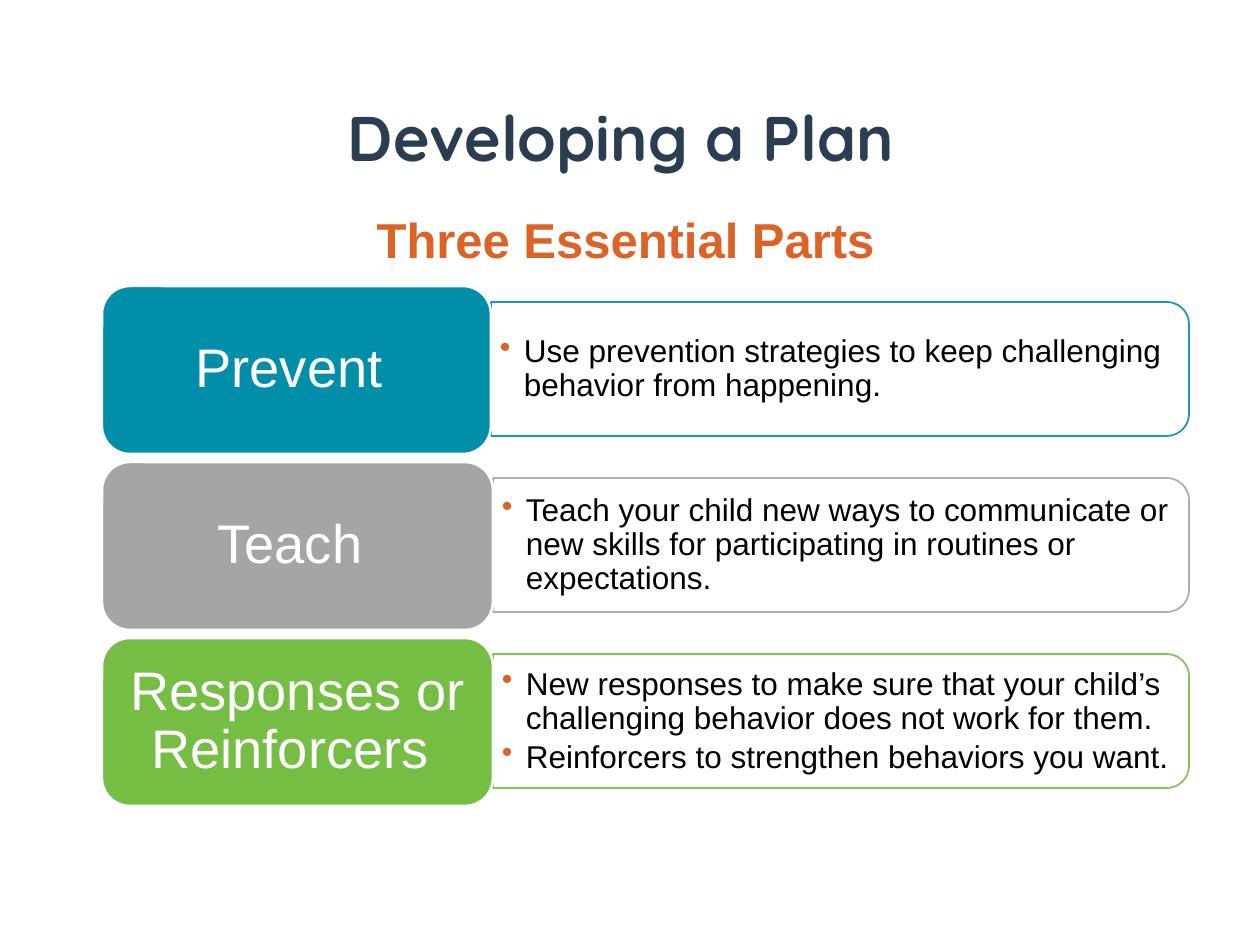
"""Build the slide on the three essential parts of a plan."""
from dataclasses import dataclass

import pptx
import pptx.dml.color
import pptx.enum.shapes
import pptx.enum.text
import pptx.oxml.ns
import pptx.util
from lxml import etree

PX = 914400 / 126
COLORS = {"navy": "2B3D50", "orange": "DB6327", "teal": "008EA9", "gray": "A5A5A5",
          "green": "75BD43", "white": "FFFFFF", "black": "000000"}
SHAPES = pptx.enum.shapes.MSO_SHAPE
CENTER = pptx.enum.text.PP_ALIGN.CENTER
CARD_LEFT, CARD_TOP, CARD_HEIGHT, ROW_STEP = 102, 286, 168, 176
PANEL_RIGHT, PANEL_HEIGHT, DETAIL_HEIGHT = 1189, 134, 121


@dataclass
class Part:
    label: str
    details: list[str]
    color: str
    card_width: int


PARTS = [
    Part("Prevent ", ["Use prevention strategies to keep challenging behavior from happening."],
         "teal", 389),
    Part("Teach ", ["Teach your child new ways to communicate or new skills for participating "
                    "in routines or expectations."], "gray", 391),
    Part("Responses or Reinforcers ",
         ["New responses to make sure that your child’s challenging behavior does not work for them.",
          "Reinforcers to strengthen behaviors you want."], "green", 391),
]


def px(n: float) -> int:
    return round(n * PX)


def box(left: float, top: float, width: float, height: float) -> list[int]:
    return [px(n) for n in (left, top, width, height)]


def rgb(name: str):
    return pptx.dml.color.RGBColor.from_string(COLORS[name])


def add_tag(parent, tag: str, **attrs: str):
    return etree.SubElement(parent, pptx.oxml.ns.qn(tag), attrs)


def style(p, size: float, color: str, font: str = "Arial", bold: bool = False) -> None:
    p.line_spacing = 0.9
    for r in p.runs:
        r.font.name, r.font.size, r.font.bold = font, pptx.util.Pt(size), bold
        r.font.color.rgb = rgb(color)


def fill_placeholder(sp, place: list[int], text: str):
    sp.left, sp.top, sp.width, sp.height = place
    tf = sp.text_frame
    tf.text = text
    tf.auto_size = pptx.enum.text.MSO_AUTO_SIZE.NONE
    p = tf.paragraphs[0]
    p.alignment = CENTER
    return p


def add_shape(s, kind, place: list[int], fill: str, line: str, weight: float):
    sp = s.shapes.add_shape(kind, *place)
    sp.shadow.inherit = False
    sp.fill.solid()
    sp.fill.fore_color.rgb = rgb(fill)
    sp.line.color.rgb = rgb(line)
    sp.line.width = pptx.util.Pt(weight)
    return sp


def add_text(s, place: list[int], text: str, inset_x: int, inset_y: int):
    tf = s.shapes.add_textbox(*place).text_frame
    tf.word_wrap = True
    tf.vertical_anchor = pptx.enum.text.MSO_ANCHOR.MIDDLE
    tf.margin_left = tf.margin_right = px(inset_x)
    tf.margin_top = tf.margin_bottom = px(inset_y)
    tf.text = text
    return tf


def add_panel(s, part: Part, left: int, top: int) -> None:
    width = PANEL_RIGHT - left
    shift = (width - PANEL_HEIGHT) / 2
    sp = add_shape(s, SHAPES.ROUND_2_SAME_RECTANGLE,
                   box(left + shift, top - shift, PANEL_HEIGHT, width), "white", part.color, 1)
    sp.rotation = 90
    for color in sp._element.spPr.iter(pptx.oxml.ns.qn("a:srgbClr")):
        add_tag(color, "a:alpha", val="90000")


def add_details(s, part: Part, left: int, top: int) -> None:
    place = box(left, top, PANEL_RIGHT - 6 - left, DETAIL_HEIGHT)
    tf = add_text(s, place, "\n".join(part.details), 9, 5)
    for p in tf.paragraphs:
        p.level = 1
        pPr = p._p.get_or_add_pPr()
        pPr.set("marL", str(px(24)))
        pPr.set("indent", str(px(-24)))
        add_tag(add_tag(pPr, "a:buClr"), "a:srgbClr", val=COLORS["orange"])
        add_tag(pPr, "a:buChar", char="•")
        p.space_after = pptx.util.Pt(2.7)
        style(p, 18, "black")


def add_part(s, part: Part, top: int) -> None:
    right = CARD_LEFT + part.card_width
    add_panel(s, part, right, top + 16)
    add_details(s, part, right, top + 23)
    card = add_shape(s, SHAPES.ROUNDED_RECTANGLE,
                     box(CARD_LEFT, top, part.card_width, CARD_HEIGHT), part.color, "white", 1.5)
    card.adjustments[0] = 0.1667
    place = box(CARD_LEFT + 8, top + 8, part.card_width - 16, CARD_HEIGHT - 16)
    p = add_text(s, place, part.label, 16, 8).paragraphs[0]
    p.alignment = CENTER
    p.space_after = pptx.util.Pt(10.85)
    style(p, 31, "white")


def main() -> None:
    prs = pptx.Presentation()
    prs.slide_width, prs.slide_height = px(1260), px(945)
    s = prs.slides.add_slide(prs.slide_layouts[1])
    title, body = s.placeholders
    p = fill_placeholder(title, box(87, 50, 1086, 183), "Developing a Plan ")
    title.text_frame.vertical_anchor = pptx.enum.text.MSO_ANCHOR.MIDDLE
    style(p, 36, "navy", "Quicksand", True)
    p = fill_placeholder(body, box(87, 210, 1077, 604), "Three Essential Parts")
    pPr = p._p.get_or_add_pPr()
    pPr.set("marL", "0")
    pPr.set("indent", "0")
    add_tag(pPr, "a:buNone")
    p.space_before = pptx.util.Pt(0)
    style(p, 28, "orange", bold=True)
    for i, part in enumerate(PARTS):
        add_part(s, part, CARD_TOP + i * ROW_STEP)
    prs.save("out.pptx")


if __name__ == "__main__":
    main()
